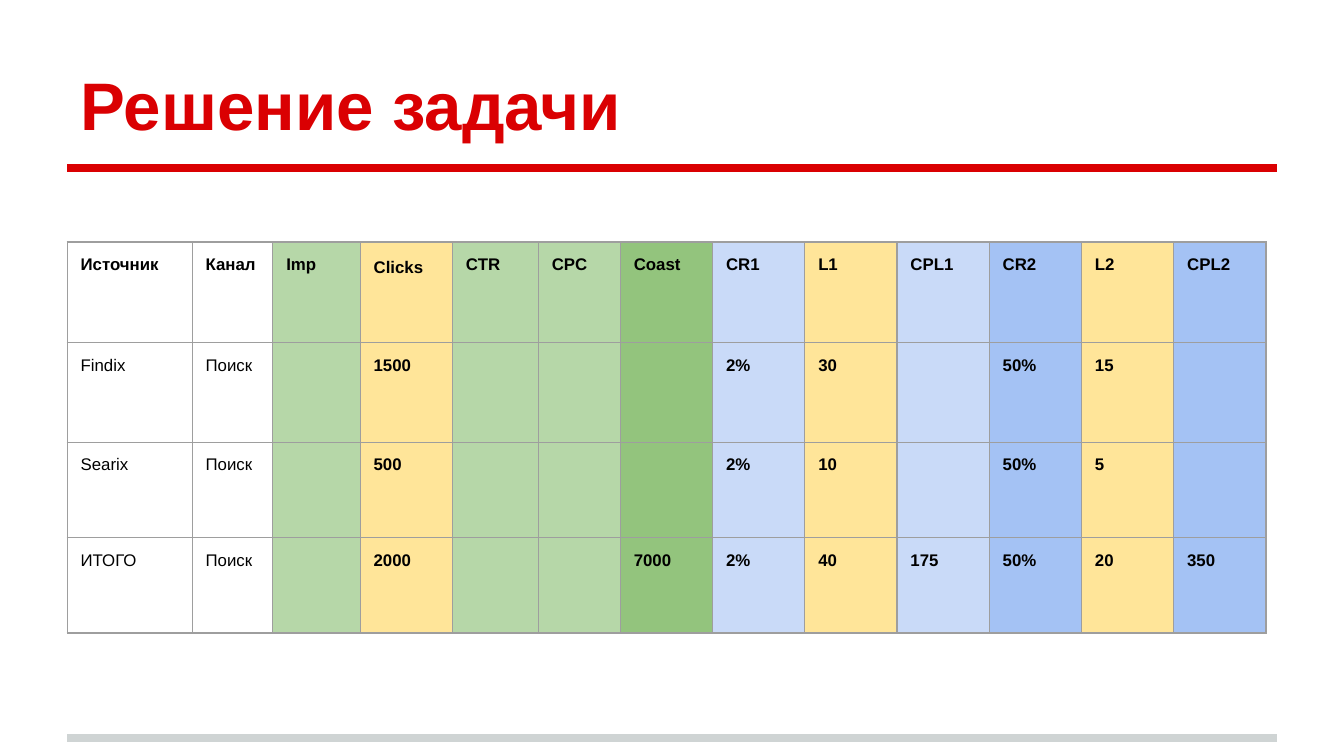
from lxml import etree
from pptx import Presentation
from pptx.dml.color import RGBColor
from pptx.enum.shapes import MSO_CONNECTOR
from pptx.enum.text import MSO_ANCHOR, MSO_AUTO_SIZE, PP_ALIGN
from pptx.oxml import parse_xml
from pptx.oxml.ns import nsdecls, qn
from pptx.util import Inches, Pt

COLORS = {
    "red": "DA0002", "gray": "CFD4D4", "border": "9E9E9E", "text": "000000",
    "green": "B6D7A8", "dark_green": "93C47D", "yellow": "FFE599",
    "light_blue": "C9DAF8", "blue": "A4C2F4",
}
TABLE_WIDTH = 8.92
# The first six columns but Clicks have their own width, the others share the rest
SHARED = (TABLE_WIDTH - 0.93 - 0.6 - 0.65 - 0.64 - 0.61) / 8
# Heading, width, fill
COLUMNS = [
    ("Источник", 0.93, None), ("Канал", 0.6, None), ("Imp", 0.65, "green"),
    ("Сlicks", SHARED, "yellow"), ("CTR", 0.64, "green"), ("CPC", 0.61, "green"),
    ("Coast", SHARED, "dark_green"), ("CR1", SHARED, "light_blue"),
    ("L1", SHARED, "yellow"), ("CPL1", SHARED, "light_blue"),
    ("CR2", SHARED, "blue"), ("L2", SHARED, "yellow"), ("CPL2", SHARED, "blue"),
]
ROWS = [
    [heading for heading, _, _ in COLUMNS],
    ["Findix", "Поиск", "", "1500", "", "", "", "2%", "30", "", "50%", "15", ""],
    ["Searix", "Поиск", "", "500", "", "", "", "2%", "10", "", "50%", "5", ""],
    ["ИТОГО", "Поиск", "", "2000", "", "", "7000", "2%", "40", "175", "50%", "20", "350"],
]
ROW_HEIGHTS = [0.75, 0.74, 0.71, 0.71]
MARGIN = Inches(0.1)


def format_text(paragraph, size, color, bold):
    for run in paragraph.runs:
        run.font.name = "Arial"
        run.font.size = Pt(size)
        run.font.bold = bold
        run.font.color.rgb = RGBColor.from_string(COLORS[color])


def add_borders(cell):
    """Draw all four edges; they must come before the fill in tcPr."""
    properties = cell._tc.get_or_add_tcPr()
    for position, edge in enumerate(("lnL", "lnR", "lnT", "lnB")):
        properties.insert(position, parse_xml(
            f'<a:{edge} {nsdecls("a")} w="{Pt(0.75)}"><a:solidFill>'
            f'<a:srgbClr val="{COLORS["border"]}"/></a:solidFill></a:{edge}>'))


prs = Presentation()
prs.slide_width = Inches(10)
prs.slide_height = Inches(10 * 9 / 16)
slide = prs.slides.add_slide(prs.slide_layouts[5])

for y, color in ((5.49, "gray"), (1.25, "red")):
    rule = slide.shapes.add_connector(
        MSO_CONNECTOR.STRAIGHT, Inches(0.5), Inches(y), Inches(9.5), Inches(y))
    rule.line.color.rgb = RGBColor.from_string(COLORS[color])
    rule.line.width = Pt(4)
    etree.SubElement(rule._element.spPr, qn("a:effectLst"))

title = slide.shapes.title
title.left, title.top = Inches(0.5), Inches(0.23)
title.width, title.height = Inches(9), Inches(0.94)
frame = title.text_frame
frame.text = "Решение задачи"
frame.auto_size = MSO_AUTO_SIZE.NONE
frame.vertical_anchor = MSO_ANCHOR.BOTTOM
frame.margin_left = frame.margin_right = MARGIN
frame.margin_top = frame.margin_bottom = MARGIN
frame.paragraphs[0].alignment = PP_ALIGN.LEFT
format_text(frame.paragraphs[0], 36, "red", True)

table = slide.shapes.add_table(
    len(ROWS), len(COLUMNS), Inches(0.5), Inches(1.8),
    Inches(TABLE_WIDTH), Inches(sum(ROW_HEIGHTS))).table
table.first_row = table.horz_banding = False
for column, (_, width, _) in zip(table.columns, COLUMNS):
    column.width = Inches(width)

for r, (values, height) in enumerate(zip(ROWS, ROW_HEIGHTS)):
    table.rows[r].height = Inches(height)
    for c, (value, (_, _, fill)) in enumerate(zip(values, COLUMNS)):
        cell = table.cell(r, c)
        cell.margin_left = cell.margin_right = MARGIN
        cell.margin_top = cell.margin_bottom = MARGIN
        if fill:
            cell.fill.solid()
            cell.fill.fore_color.rgb = RGBColor.from_string(COLORS[fill])
        else:
            cell.fill.background()
        add_borders(cell)
        if value:
            cell.text_frame.text = value
            format_text(cell.text_frame.paragraphs[0], 9, "text", r == 0 or c > 1)

clicks_heading = table.cell(0, 3).text_frame.paragraphs[0]
clicks_heading.line_spacing = 1.15

prs.save("out.pptx")
